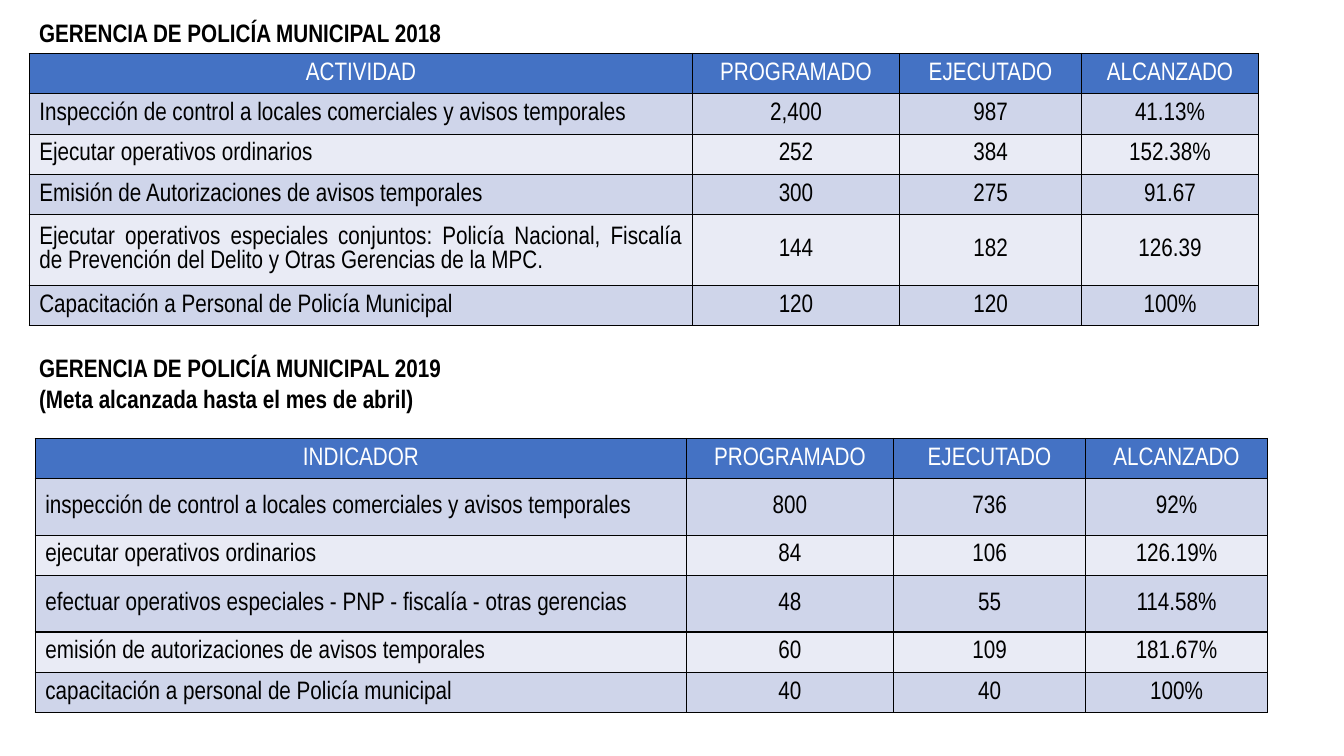
import pptx
import pptx.util
import pptx.dml.color
import pptx.enum.text
import pptx.oxml
import pptx.oxml.ns

Inches = pptx.util.Inches
Pt = pptx.util.Pt
ALIGN = pptx.enum.text.PP_ALIGN
COLORS = {
    "head": "4472C4",
    "odd": "CFD5EA",
    "even": "E9EBF5",
    "white": "FFFFFF",
    "black": "000000",
}
HEADS = ["PROGRAMADO", "EJECUTADO", "ALCANZADO"]
ROWS_2018 = [
    ["ACTIVIDAD"] + HEADS,
    ["Inspección de control a locales comerciales y avisos temporales", "2,400", "987", "41.13%"],
    ["Ejecutar operativos ordinarios", "252", "384", "152.38%"],
    ["Emisión de Autorizaciones de avisos temporales", "300", "275", "91.67"],
    ["Ejecutar operativos especiales conjuntos: Policía Nacional, Fiscalía de Prevención "
     "del Delito y Otras Gerencias de la MPC.", "144", "182", "126.39"],
    ["Capacitación a Personal de Policía Municipal", "120", "120", "100%"],
]
ROWS_2019 = [
    ["INDICADOR"] + HEADS,
    ["inspección de control a locales comerciales y avisos temporales", "800", "736", "92%"],
    ["ejecutar operativos ordinarios", "84", "106", "126.19%"],
    ["efectuar operativos especiales - PNP - fiscalía - otras gerencias", "48", "55", "114.58%"],
    ["emisión de autorizaciones de avisos temporales", "60", "109", "181.67%"],
    ["capacitación a personal de Policía municipal", "40", "40", "100%"],
]


def color(name):
    return pptx.dml.color.RGBColor.from_string(COLORS[name])


def set_font(para, ink, bold=False):
    para.font.name = "Arial Narrow"
    para.font.size = Pt(18)
    para.font.bold = bold
    para.font.color.rgb = color(ink)


def add_title(slide, left, top, width, height, lines):
    box = slide.shapes.add_textbox(Inches(left), Inches(top), Inches(width), Inches(height))
    frame = box.text_frame
    frame.word_wrap = True
    frame.auto_size = pptx.enum.text.MSO_AUTO_SIZE.SHAPE_TO_FIT_TEXT
    frame.text = "\n".join(lines)
    for para in frame.paragraphs:
        set_font(para, "black", True)


def add_border(cell):
    props = cell._tc.get_or_add_tcPr()
    for place, side in enumerate(["lnL", "lnR", "lnT", "lnB"]):
        line = pptx.oxml.parse_xml(
            f'<a:{side} {pptx.oxml.ns.nsdecls("a")} w="{Pt(1)}"><a:solidFill>'
            f'<a:srgbClr val="{COLORS["black"]}"/></a:solidFill></a:{side}>'
        )
        props.insert(place, line)


def fill_cell(cell, text, row, col):
    fill = "head" if row == 0 else "odd" if row % 2 else "even"
    cell.fill.solid()
    cell.fill.fore_color.rgb = color(fill)
    cell.vertical_anchor = pptx.enum.text.MSO_ANCHOR.MIDDLE
    cell.text = text
    para = cell.text_frame.paragraphs[0]
    para.alignment = ALIGN.JUSTIFY if row and col == 0 else ALIGN.CENTER
    set_font(para, "black" if row else "white")
    add_border(cell)


def add_grid(slide, left, top, widths, heights, rows):
    frame = slide.shapes.add_table(
        len(rows), len(widths), Inches(left), Inches(top),
        Inches(sum(widths)), Inches(sum(heights)),
    )
    table = frame.table
    for col, width in enumerate(widths):
        table.columns[col].width = Inches(width)
    for row, height in enumerate(heights):
        table.rows[row].height = Inches(height)
        for col, text in enumerate(rows[row]):
            fill_cell(table.cell(row, col), text, row, col)


def main():
    deck = pptx.Presentation()
    deck.slide_width = Inches(13.33)
    deck.slide_height = Inches(7.5)
    slide = deck.slides.add_slide(deck.slide_layouts[6])
    add_title(slide, 0.29, 0.12, 5.84, 0.4, ["GERENCIA DE POLICÍA MUNICIPAL 2018"])
    add_grid(slide, 0.29, 0.53, [6.58, 2.05, 1.81, 1.75],
             [0.4, 0.4, 0.4, 0.4, 0.7, 0.4], ROWS_2018)
    add_title(slide, 0.29, 3.45, 7.26, 0.71,
              ["GERENCIA DE POLICÍA MUNICIPAL 2019", "(Meta alcanzada hasta el mes de abril)"])
    add_grid(slide, 0.35, 4.35, [6.46, 2.05, 1.91, 1.8],
             [0.4, 0.56, 0.4, 0.56, 0.4, 0.4], ROWS_2019)
    deck.save("out.pptx")


if __name__ == "__main__":
    main()
